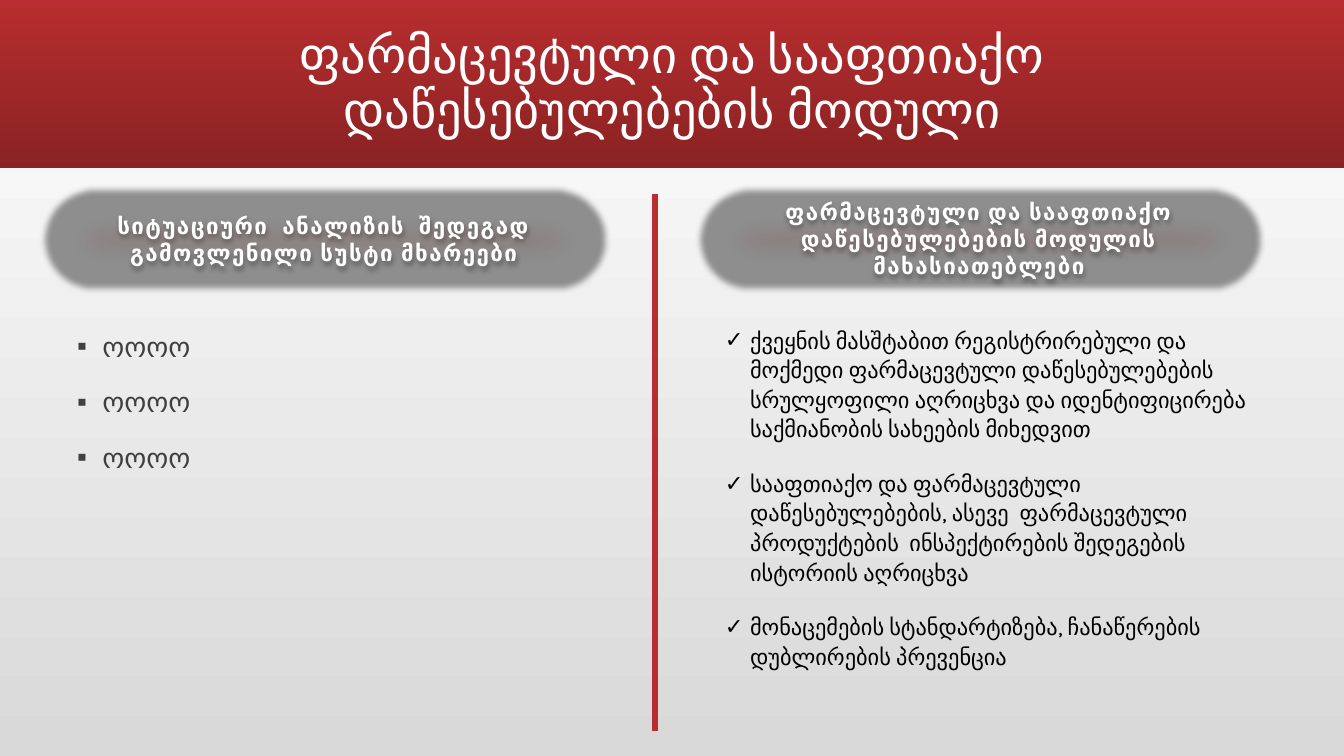
from lxml.etree import SubElement
from pptx import Presentation
from pptx.dml.color import RGBColor
from pptx.enum.shapes import MSO_CONNECTOR as Line, MSO_SHAPE as Shape
from pptx.enum.text import MSO_ANCHOR as Anchor, PP_ALIGN as Align
from pptx.oxml.ns import qn
from pptx.util import Emu, Pt

PX = 9525
RED, DARK, GREY, WHITE = "B82D2F", "8A2223", "8E8E8E", "FFFFFF"


def px(*vals):
    return [Emu(v * PX) for v in vals]


def rgb(code):
    return RGBColor.from_string(code)


def node(par, tag, **attrs):
    return SubElement(par, qn(tag), {k: str(v) for k, v in attrs.items()})


def write(frame, *texts, size=16, font="Karla", color=WHITE, bold=False,
          align=Align.LEFT, anchor=Anchor.TOP, lead=1.0, before=0,
          mark=None, track=0):
    """Fill a text frame, one paragraph for each text."""
    frame.word_wrap = True
    frame.vertical_anchor = anchor
    for i, text in enumerate(texts):
        para = frame.add_paragraph() if i else frame.paragraphs[0]
        para.alignment, para.line_spacing = align, lead
        para.space_before = Pt(before)
        if mark:
            props = para._p.get_or_add_pPr()
            props.set("marL", str(24 * PX))
            props.set("indent", str(-24 * PX))
            node(props, "a:buFont", typeface="Arial")
            node(props, "a:buChar", char=mark)
        run = para.add_run()
        run.text = text
        style = run.font
        style.size, style.name, style.bold = Pt(size), font, bold
        style.color.rgb = rgb(color)
        if track:
            run._r.get_or_add_rPr().set("spc", str(track * 100))


class Deck:
    def __init__(self, wide, high):
        self.prs = Presentation()
        self.prs.slide_width, self.prs.slide_height = px(wide, high)
        self.slide = self.prs.slides.add_slide(self.prs.slide_layouts[5])
        self.shapes = self.slide.shapes

    def blend(self, fill, first, last, angle):
        fill.gradient()
        fill.gradient_angle = angle
        for stop, code in zip(fill.gradient_stops, (first, last)):
            stop.color.rgb = rgb(code)

    def block(self, *box, kind=Shape.RECTANGLE, color=RED):
        shape = self.shapes.add_shape(kind, *px(*box))
        shape.shadow.inherit = False
        shape.line.fill.background()
        shape.fill.solid()
        shape.fill.fore_color.rgb = rgb(color)
        return shape

    def title(self, text, *box):
        head = self.shapes.title
        head.left, head.top, head.width, head.height = px(*box)
        self.shapes.element.append(head.element)  # in front of the band
        write(head.text_frame, text, size=36, align=Align.CENTER,
              anchor=Anchor.MIDDLE, lead=0.9)

    def label(self, text, x, y, w, h):
        # Soft grey pill, taller than the label
        pill = self.block(x - 2, y - 16, w + 6, h + 33,
                          kind=Shape.ROUNDED_RECTANGLE, color=GREY)
        pill.adjustments[0] = 0.45
        fx = pill.element.spPr.find(qn("a:effectLst"))
        node(fx, "a:softEdge", rad=6 * PX)

        # Faint red glimmer with the text
        shape = self.block(x, y, w, h)
        tint = shape.element.spPr.find(qn("a:solidFill"))[0]
        node(tint, "a:alpha", val=30000)
        fx = shape.element.spPr.find(qn("a:effectLst"))
        shade = node(fx, "a:outerShdw", blurRad=44450, dist=27940,
                     dir=5400000, algn="ctr", rotWithShape=0)
        tint = node(shade, "a:srgbClr", val="000000")
        node(tint, "a:alpha", val=32000)
        node(fx, "a:softEdge", rad=26 * PX)
        write(shape.text_frame, text, bold=True, align=Align.CENTER,
              anchor=Anchor.MIDDLE, track=1)

    def rule(self, *ends):
        line = self.shapes.add_connector(Line.STRAIGHT, *px(*ends))
        line.line.color.rgb = rgb(RED)
        line.line.width = Pt(4)
        node(line.element.spPr, "a:effectLst")

    def items(self, texts, *box, **form):
        area = self.shapes.add_textbox(*px(*box))
        write(area.text_frame, *texts, **form)


def main():
    deck = Deck(1280, 720)

    # Background and title band
    deck.blend(deck.slide.background.fill, "D9D9D9", WHITE, 90)
    band = deck.block(0, 0, 1280, 160)
    deck.blend(band.fill, RED, DARK, 270)
    deck.title("ფარმაცევტული და სააფთიაქო დაწესებულებების მოდული",
               112, 11, 1056, 139)

    # Left column: weak points
    deck.items(["ოოოო"] * 3, 64, 304, 517, 384, size=20, font="Calibri",
               color="404040", lead=1.15, before=12, mark="▪")
    deck.label("სიტუაციური  ანალიზის  შედეგად გამოვლენილი სუსტი მხარეები",
               40, 192, 537, 71)

    # Divider
    deck.rule(624, 185, 624, 696)

    # Right column: module features
    deck.label("ფარმაცევტული და სააფთიაქო დაწესებულებების მოდულის "
               "მახასიათებლები", 664, 192, 537, 71)
    deck.items([
        "ქვეყნის მასშტაბით რეგისტრირებული და მოქმედი ფარმაცევტული "
        "დაწესებულებების სრულყოფილი აღრიცხვა და იდენტიფიცირება "
        "საქმიანობის სახეების მიხედვით",
        "სააფთიაქო და ფარმაცევტული დაწესებულებების, ასევე  ფარმაცევტული "
        "პროდუქტების  ინსპექტირების შედეგების ისტორიის აღრიცხვა",
        "მონაცემების სტანდარტიზება, ჩანაწერების დუბლირების პრევენცია",
    ], 681, 304, 517, 384, color="000000", lead=1.1, before=18, mark="✓")

    deck.prs.save("out.pptx")


if __name__ == "__main__":
    main()
